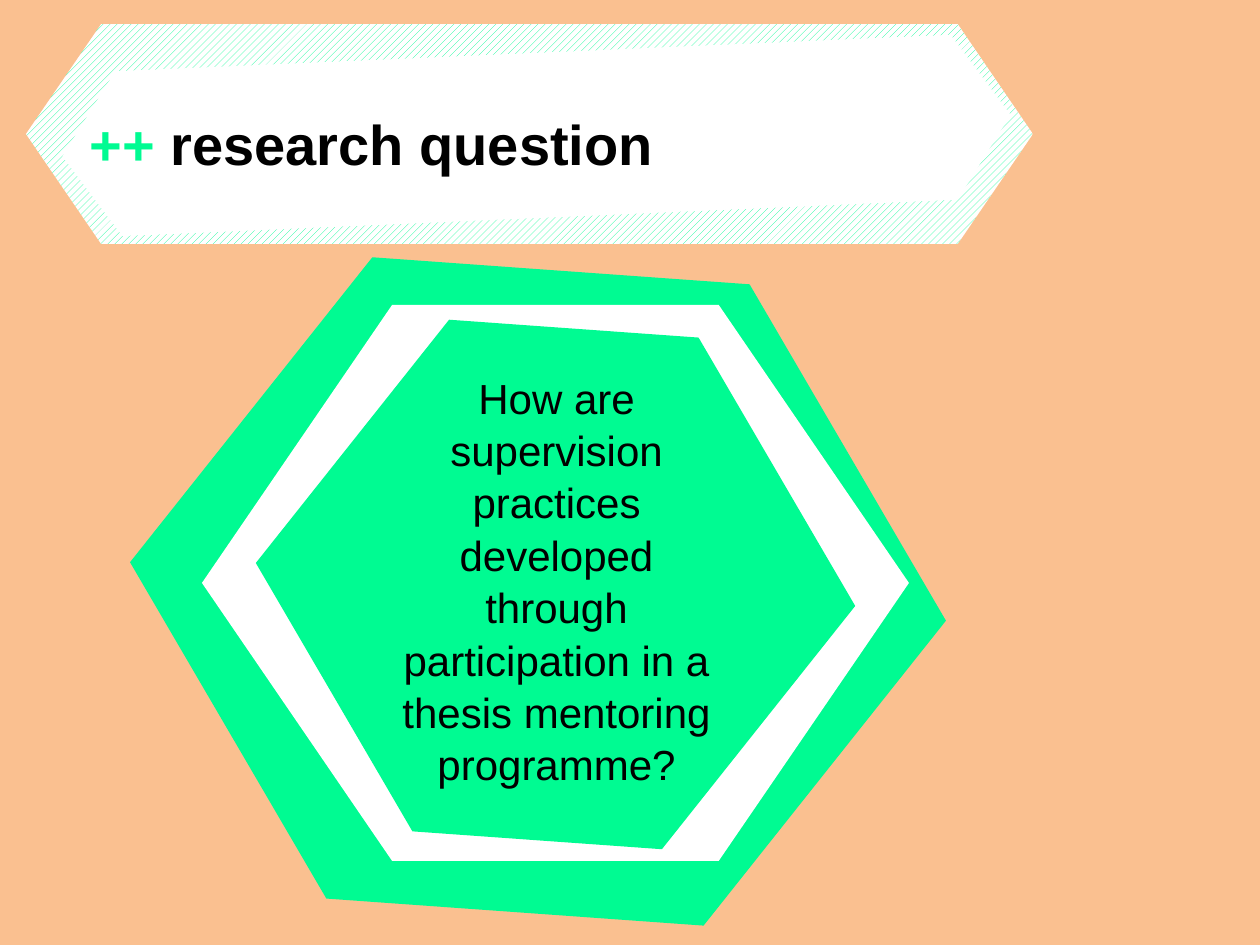
from dataclasses import dataclass

from lxml.etree import SubElement
from pptx import Presentation
from pptx.dml.color import RGBColor as Rgb
from pptx.enum.dml import MSO_PATTERN as Pattern
from pptx.enum.shapes import MSO_SHAPE as Preset
from pptx.enum.text import MSO_ANCHOR as Anchor, MSO_AUTO_SIZE as AutoSize, PP_ALIGN as Align
from pptx.util import Emu, Pt


@dataclass(frozen=True)
class Theme:
    peach: Rgb = Rgb(0xFA, 0xC0, 0x90)
    green: Rgb = Rgb(0x00, 0xFB, 0x92)
    white: Rgb = Rgb(0xFF, 0xFF, 0xFF)
    black: Rgb = Rgb(0x00, 0x00, 0x00)
    font: str = "Arial"
    title_size: int = 32
    question_size: int = 24


THEME = Theme()
EMU_PER_PX = 914400 / 126
TILT = 4.1


def px(length):
    return Emu(round(length * EMU_PER_PX))


def inside(box, left, top, width, height):
    """Turn a place relative to a region into a place on the slide."""
    return box[0] + left, box[1] + top, width, height


def set_all(target, values):
    for name, value in values.items():
        setattr(target, name, value)


def add_hexagon(slide, place, colour, rotation=0):
    hexagon = slide.shapes.add_shape(Preset.HEXAGON, *map(px, place))
    hexagon.adjustments[0] = 0.342
    hexagon.rotation = rotation
    hexagon.shadow.inherit = False
    hexagon.line.fill.background()
    hexagon.fill.solid()
    hexagon.fill.fore_color.rgb = colour
    return hexagon


def add_run(paragraph, text, colour, size, bold=False):
    run = paragraph.add_run()
    run.text = text
    set_all(run.font, {"name": THEME.font, "size": Pt(size), "bold": bold})
    run.font.color.rgb = colour


def question_panel(slide, box):
    # Nested hexagons, from the outside in
    add_hexagon(slide, box, THEME.green, TILT)
    add_hexagon(slide, inside(box, 73, 35, 707, 556), THEME.white)
    add_hexagon(slide, inside(box, 126, 58, 601, 513), THEME.green, TILT)

    # Research question
    question = slide.shapes.add_textbox(*map(px, inside(box, 243, 94, 369, 459)))
    set_all(question.text_frame, {"word_wrap": True, "auto_size": AutoSize.NONE,
                                  "vertical_anchor": Anchor.TOP})
    wording = question.text_frame.paragraphs[0]
    set_all(wording, {"alignment": Align.CENTER, "line_spacing": 1.04})
    add_run(wording, "How are supervision practices developed through "
            "participation in a thesis mentoring programme?",
            THEME.black, THEME.question_size)


def title_banner(slide, box):
    # Hatched hexagon with a tilted white one on top
    hatching = add_hexagon(slide, box, THEME.green).fill
    hatching.patterned()
    hatching.pattern = Pattern.WIDE_UPWARD_DIAGONAL
    hatching.fore_color.rgb = THEME.green
    hatching.back_color.rgb = THEME.white
    add_hexagon(slide, inside(box, 36, 29, 949, 165), THEME.white, 357.5)

    # Title, brought in front of the banner
    title = slide.shapes.title
    places = map(px, inside(box, 51, 78, 897, 81))
    set_all(title, dict(zip(("left", "top", "width", "height"), places)))
    set_all(title.text_frame, {"word_wrap": True, "auto_size": AutoSize.NONE,
                               "vertical_anchor": Anchor.BOTTOM})
    heading = title.text_frame.paragraphs[0]
    heading.alignment = Align.LEFT
    add_run(heading, "++", THEME.green, THEME.title_size, True)
    add_run(heading, " research question", THEME.black, THEME.title_size, True)
    slide.shapes._spTree.append(title._element)


def main():
    deck = Presentation()
    set_all(deck, {"slide_width": px(1260), "slide_height": px(945)})
    slide = deck.slides.add_slide(deck.slide_layouts[5])
    slide.background.fill.solid()
    slide.background.fill.fore_color.rgb = THEME.peach
    question_panel(slide, (129, 270, 818, 643))
    title_banner(slide, (26, 24, 1007, 220))
    deck.save("out.pptx")


if __name__ == "__main__":
    main()
